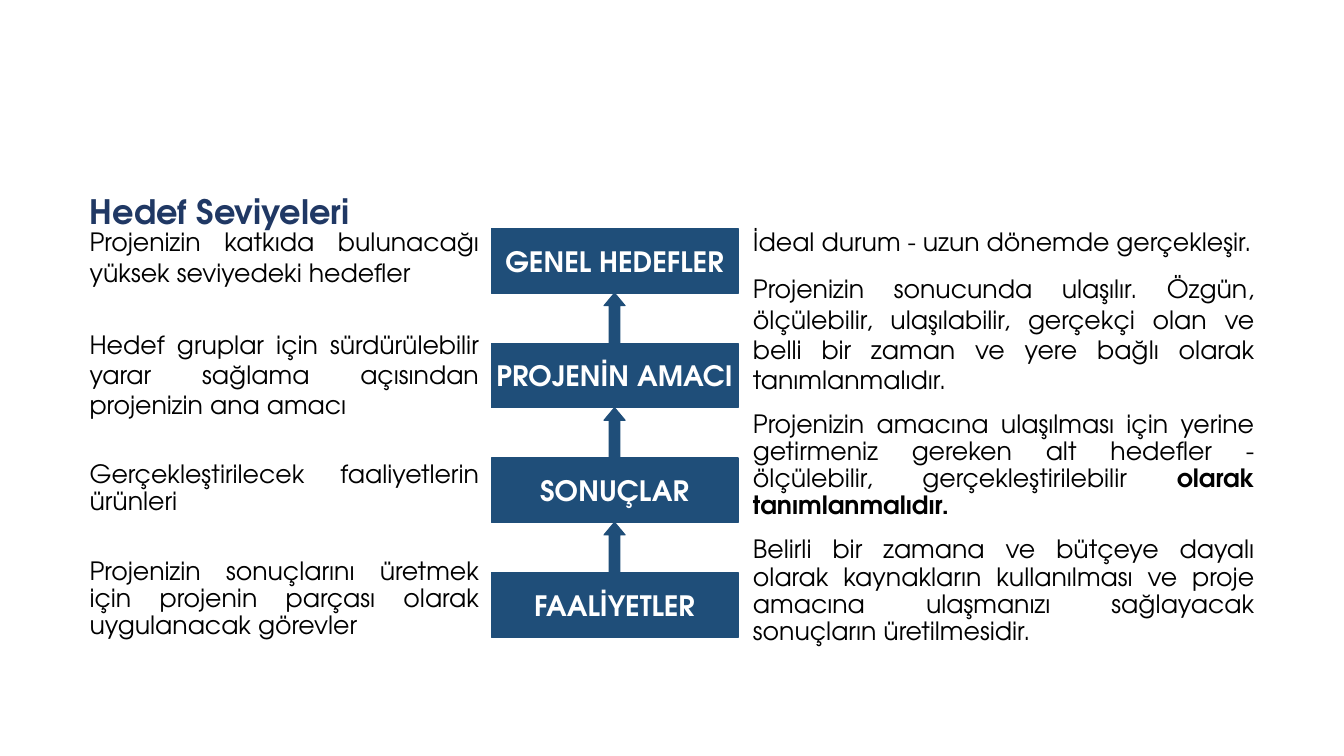
import pptx
import pptx.util
import pptx.dml.color
import pptx.enum.shapes
import pptx.enum.text

Inches = pptx.util.Inches
Pt = pptx.util.Pt
ALIGN = pptx.enum.text.PP_ALIGN
ANCHOR = pptx.enum.text.MSO_ANCHOR
AUTO = pptx.enum.text.MSO_AUTO_SIZE
SHAPE = pptx.enum.shapes.MSO_SHAPE

FONT = "TeX Gyre Adventor"
COLORS = {"title": "203864", "box": "1F4E79", "label": "FFFFFF", "body": "000000"}

TITLE = "Hedef Seviyeleri"
LEVELS = ["GENEL HEDEFLER", "PROJENİN AMACI", "SONUÇLAR", "FAALİYETLER"]

# runs (text, bold), space before, space after, line spacing
MEANINGS = [
    ([("Projenizin katkıda bulunacağı yüksek seviyedeki hedefler", False)], 0, 0, 1.0),
    ([("Hedef gruplar için sürdürülebilir yarar sağlama açısından projenizin ana amacı", False)], 30, 30, 1.0),
    ([("Gerçekleştirilecek faaliyetlerin ürünleri", False)], 0, 30, 0.9),
    ([("Projenizin sonuçlarını üretmek için projenin parçası olarak uygulanacak görevler", False)], 0, 0, 0.9),
]
CRITERIA = [
    ([("İdeal durum - uzun dönemde gerçekleşir.", False)], 0, 0, 1.0),
    ([("Projenizin sonucunda ulaşılır. Özgün, ölçülebilir, ulaşılabilir, gerçekçi olan "
       "ve belli bir zaman ve yere bağlı olarak tanımlanmalıdır.", False)], 12, 12, 1.0),
    ([("Projenizin amacına ulaşılması için yerine getirmeniz gereken alt hedefler - "
       "ölçülebilir, gerçekleştirilebilir ", False),
      ("olarak tanımlanmalıdır.", True)], 0, 12, 0.9),
    ([("Belirli bir zamana ve bütçeye dayalı olarak kaynakların kullanılması ve proje "
       "amacına ulaşmanızı sağlayacak sonuçların üretilmesidir.", False)], 0, 0, 0.9),
]
COLUMNS = [
    (MEANINGS, 0.79, 4.06, 5.23),
    (CRITERIA, 7.37, 5.17, 5.51),
]

BOX_X, BOX_Y, BOX_W, BOX_H = 4.87, 2.27, 2.45, 0.64
ARROW_W, ARROW_H = 0.21, 0.5
STEP = 1.137


def rgb(name):
    return pptx.dml.color.RGBColor.from_string(COLORS[name])


def set_font(font, size, color, bold=None):
    font.name = FONT
    font.size = Pt(size)
    font.color.rgb = rgb(color)
    font.bold = bold


def add_solid(slide, kind, x, y, w, h):
    sp = slide.shapes.add_shape(kind, Inches(x), Inches(y), Inches(w), Inches(h))
    sp.shadow.inherit = False
    sp.fill.solid()
    sp.fill.fore_color.rgb = rgb("box")
    sp.line.color.rgb = rgb("box")
    sp.line.width = Pt(0.75)
    return sp


def add_title(slide):
    sp = slide.shapes.title
    sp.left, sp.top, sp.width, sp.height = map(Inches, (0.79, 1.77, 4.02, 0.69))
    tf = sp.text_frame
    tf.text = TITLE
    tf.auto_size = AUTO.NONE
    tf.vertical_anchor = ANCHOR.MIDDLE
    p = tf.paragraphs[0]
    p.alignment = ALIGN.LEFT
    p.line_spacing = 0.9
    set_font(p.font, 24, "title", True)


def add_level(slide, label, y):
    tf = add_solid(slide, SHAPE.RECTANGLE, BOX_X, y, BOX_W, BOX_H).text_frame
    tf.text = label
    tf.word_wrap = False
    tf.vertical_anchor = ANCHOR.MIDDLE
    p = tf.paragraphs[0]
    p.alignment = ALIGN.CENTER
    set_font(p.font, 20, "label", True)


def add_arrow(slide, y):
    x = BOX_X + (BOX_W - ARROW_W) / 2
    sp = add_solid(slide, SHAPE.UP_ARROW, x, y, ARROW_W, ARROW_H)
    sp.adjustments[0] = 0.5
    sp.adjustments[1] = 0.6


def add_column(slide, paragraphs, x, w, h):
    sp = slide.shapes.add_textbox(Inches(x), Inches(2.2), Inches(w), Inches(h))
    tf = sp.text_frame
    tf.word_wrap = True
    tf.auto_size = AUTO.SHAPE_TO_FIT_TEXT
    for i, (runs, before, after, spacing) in enumerate(paragraphs):
        p = tf.add_paragraph() if i else tf.paragraphs[0]
        p.alignment = ALIGN.JUSTIFY
        p.space_before = Pt(before)
        p.space_after = Pt(after)
        p.line_spacing = spacing
        set_font(p.font, 18, "body")
        for text, bold in runs:
            r = p.add_run()
            r.text = text
            r.font.bold = bold


def main():
    prs = pptx.Presentation()
    prs.slide_width = Inches(13.33)
    prs.slide_height = Inches(7.5)
    slide = prs.slides.add_slide(prs.slide_layouts[5])
    add_title(slide)
    for i, label in enumerate(LEVELS):
        y = BOX_Y + i * STEP
        add_level(slide, label, y)
        if i:
            add_arrow(slide, y - ARROW_H)
    for column in COLUMNS:
        add_column(slide, *column)
    prs.save("out.pptx")


if __name__ == "__main__":
    main()
